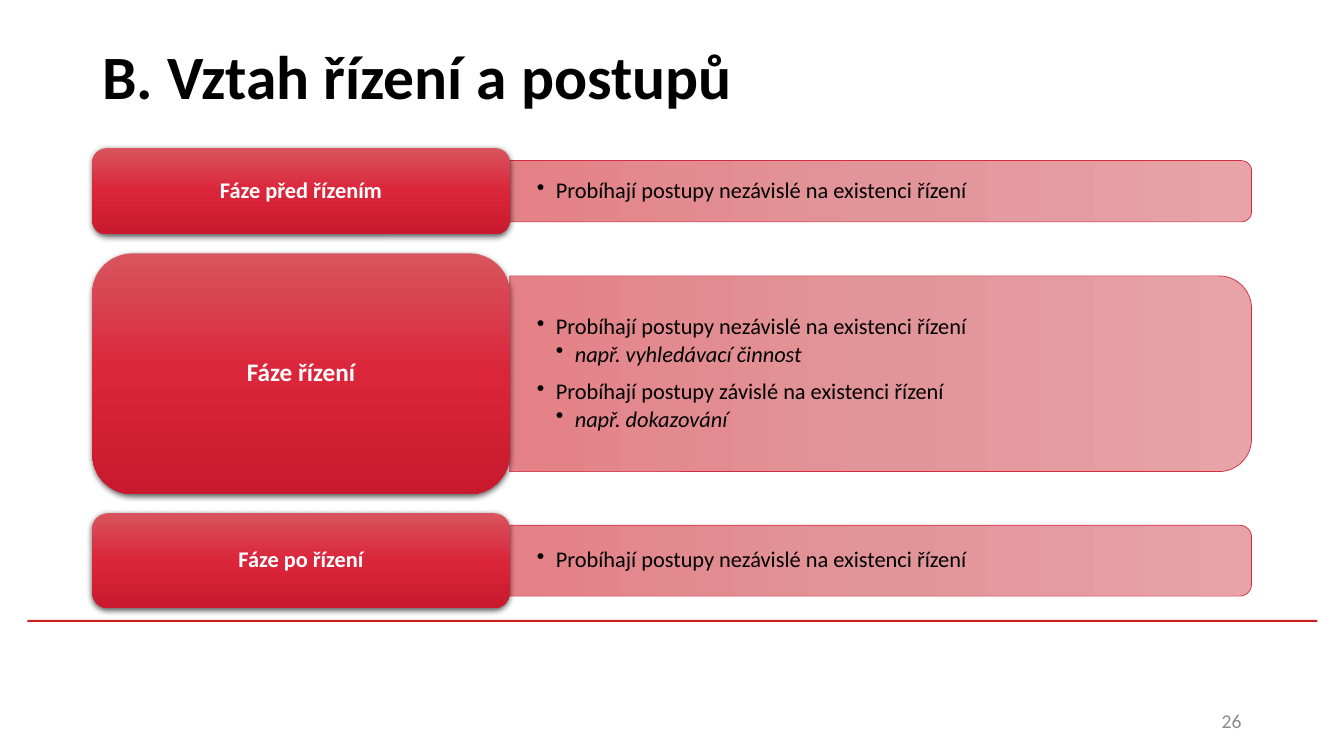
from copy import deepcopy
from dataclasses import dataclass

from lxml.etree import SubElement
from pptx import Presentation
from pptx.dml.color import RGBColor
from pptx.enum.shapes import MSO_SHAPE as Shape
from pptx.enum.text import MSO_ANCHOR as Anchor, PP_ALIGN as Align
from pptx.oxml import parse_xml
from pptx.oxml.ns import nsdecls, qn
from pptx.util import Pt


@dataclass(frozen=True)
class Theme:
    font: str = "Calibri"
    text: str = "000000"
    label_text: str = "FFFFFF"
    muted: str = "8C8C8C"
    rule: str = "CD1F21"
    panel_line: str = "D22D40"
    panel_fill: tuple = ("E7A3A7", "E29599", "E38186")
    label_fill: tuple = ("D8555E", "DA253A", "C9192E")
    title_size: float = 44
    large_size: float = 18
    body_size: float = 16
    number_size: float = 14


THEME = Theme()
LABEL_SHARE = 0.36  # part of a row's width taken by its label
ROW_GAP = 13.6
BULLET_INDENT = 13.5
GROUP_GAP = 7

INDEPENDENT = "Probíhají postupy nezávislé na existenci řízení"
# label, label size, label height, panel height, bullets as (level, text)
PHASES = [
    ("Fáze před řízením", THEME.body_size, 61.6, 43.8, [(1, INDEPENDENT)]),
    ("Fáze řízení", THEME.large_size, 172, 139.8, [
        (1, INDEPENDENT),
        (2, "např. vyhledávací činnost"),
        (1, "Probíhají postupy závislé na existenci řízení"),
        (2, "např. dokazování"),
    ]),
    ("Fáze po řízení", THEME.body_size, 67.8, 50.6, [(1, INDEPENDENT)]),
]


def style(paragraph, size, color, bold=False, italic=False):
    for run in paragraph.runs:
        font = run.font
        font.name, font.size = THEME.font, Pt(size)
        font.bold, font.italic = bold, italic
        font.color.rgb = RGBColor.from_string(color)


def set_frame(text_frame, margin_x, margin_y):
    text_frame.word_wrap = True
    text_frame.vertical_anchor = Anchor.MIDDLE
    text_frame.margin_left = text_frame.margin_right = Pt(margin_x)
    text_frame.margin_top = text_frame.margin_bottom = Pt(margin_y)


def add_text_box(slide, box, margin_x=7.2, margin_y=3.6):
    text_frame = slide.shapes.add_textbox(*map(Pt, box)).text_frame
    set_frame(text_frame, margin_x, margin_y)
    return text_frame


def add_plain_shape(slide, kind, box):
    shape = slide.shapes.add_shape(kind, *map(Pt, box))
    shape.shadow.inherit = False
    shape.line.fill.background()
    return shape


def fill_gradient(shape, colors):
    """Spread three colours evenly from the top of the shape to its bottom."""
    shape.fill.gradient()
    shape.fill.gradient_angle = 270
    stop_list = shape._element.spPr.find(qn("a:gradFill")).find(qn("a:gsLst"))
    stop_list.insert(1, deepcopy(stop_list[0]))
    for stop, color, position in zip(shape.fill.gradient_stops, colors, (0, 0.5, 1)):
        stop.color.rgb = RGBColor.from_string(color)
        stop.position = position


def add_shadow(shape):
    effects = shape._element.spPr.find(qn("a:effectLst"))
    effects.append(parse_xml(
        f'<a:outerShdw {nsdecls("a")} blurRad="{Pt(4.5)}" dist="{Pt(1.5)}" '
        'dir="5400000" algn="ctr" rotWithShape="0">'
        '<a:srgbClr val="000000"><a:alpha val="63000"/></a:srgbClr></a:outerShdw>'))


def add_line_of_text(slide, box, text, size, color, bold=False, align=Align.LEFT):
    paragraph = add_text_box(slide, box).paragraphs[0]
    paragraph.text = text
    paragraph.alignment = align
    style(paragraph, size, color, bold=bold)


def add_panel(slide, box, bullets):
    left, top, width, height = box
    # The shape stands upright, then turns so its rounded end faces right
    upright = (left + (width - height) / 2, top + (height - width) / 2, height, width)
    panel = add_plain_shape(slide, Shape.ROUND_2_SAME_RECTANGLE, upright)
    panel.rotation = 90
    fill_gradient(panel, THEME.panel_fill)
    panel.line.color.rgb = RGBColor.from_string(THEME.panel_line)
    panel.line.width = Pt(0.5)

    # Bullets
    text_frame = add_text_box(slide, box, 19.5, 10)
    for index, (level, text) in enumerate(bullets):
        paragraph = text_frame.paragraphs[0] if index == 0 else text_frame.add_paragraph()
        paragraph.text = text
        paragraph.level = level
        paragraph.line_spacing = 0.9
        paragraph.space_after = Pt(2.4)
        if index and level == 1:
            paragraph.space_before = Pt(GROUP_GAP)
        properties = paragraph._p.get_or_add_pPr()
        properties.set("marL", str(Pt(BULLET_INDENT * level)))
        properties.set("indent", str(-Pt(BULLET_INDENT)))
        SubElement(properties, qn("a:buChar")).set("char", "•")
        style(paragraph, THEME.body_size, THEME.text, italic=level == 2)


def add_label(slide, box, text, size):
    label = add_plain_shape(slide, Shape.ROUNDED_RECTANGLE, box)
    fill_gradient(label, THEME.label_fill)
    add_shadow(label)
    set_frame(label.text_frame, 5, 2.5)
    paragraph = label.text_frame.paragraphs[0]
    paragraph.text = text
    paragraph.alignment = Align.CENTER
    paragraph.line_spacing = 0.9
    style(paragraph, size, THEME.label_text, bold=True)


def add_phases(slide, left, top, width):
    label_width = width * LABEL_SHARE
    for text, size, label_height, panel_height, bullets in PHASES:
        panel_top = top + (label_height - panel_height) / 2
        panel_box = (left + label_width, panel_top, width - label_width, panel_height)
        add_panel(slide, panel_box, bullets)
        add_label(slide, (left, top, label_width, label_height), text, size)
        top += label_height + ROW_GAP


def add_rule(slide, box):
    rule = add_plain_shape(slide, Shape.RECTANGLE, box)
    rule.fill.solid()
    rule.fill.fore_color.rgb = RGBColor.from_string(THEME.rule)


def main():
    presentation = Presentation()
    presentation.slide_width, presentation.slide_height = Pt(960), Pt(540)
    slide = presentation.slides.add_slide(presentation.slide_layouts[6])
    add_rule(slide, (19.5, 442.8, 921.6, 1.5))
    add_line_of_text(slide, (66, 1.5, 828, 104.4), "B. Vztah řízení a postupů",
                     THEME.title_size, THEME.text, bold=True)
    add_line_of_text(slide, (678, 500.5, 216, 28.75), "26",
                     THEME.number_size, THEME.muted, align=Align.RIGHT)
    add_phases(slide, 66, 105.8, 828)
    presentation.save("out.pptx")


if __name__ == "__main__":
    main()
